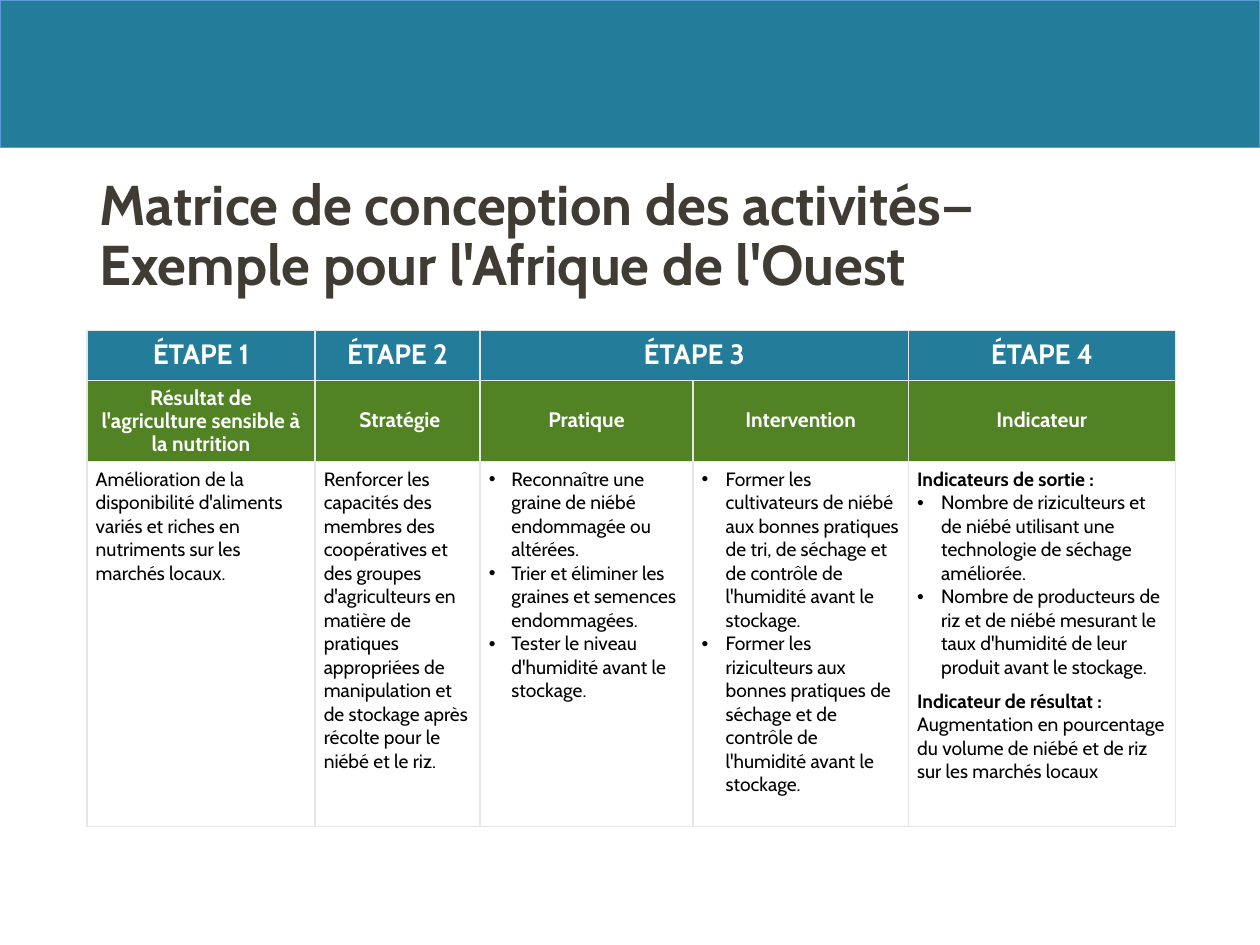
from dataclasses import dataclass

from pptx import Presentation
from pptx.dml.color import RGBColor as RGB
from pptx.enum.shapes import MSO_SHAPE as SHAPE
from pptx.enum.text import MSO_ANCHOR as ANCHOR, PP_ALIGN as ALIGN
from pptx.oxml import parse_xml
from pptx.oxml.ns import nsdecls
from pptx.util import Inches, Pt


@dataclass(frozen=True)
class Theme:
    font: str = "Cabin"
    teal: str = "237C9A"
    green: str = "518325"
    band_line: str = "5B9BD5"
    grid: str = "E7E6E6"
    title: str = "403B33"
    white: str = "FFFFFF"
    body: str = "000000"
    title_size: int = 32
    step_size: int = 16
    heading_size: int = 12
    body_size: int = 11


@dataclass(frozen=True)
class Item:
    """One paragraph of a body cell: a bold lead, then plain text."""
    text: str = ""
    lead: str = ""
    indent: float = 0
    after: int = 0


T = Theme()
COLUMNS = [1.81, 1.31, 1.69, 1.71, 2.12]
ROWS = [0.4, 0.61, 2.9]
STEPS = ["ÉTAPE 1", "ÉTAPE 2", "ÉTAPE 3", "", "ÉTAPE 4"]
HEADINGS = ["Résultat de l'agriculture sensible à la nutrition", " Stratégie",
            "Pratique", "Intervention", "Indicateur"]
BODY = [
    [Item("Amélioration de la disponibilité d'aliments variés et riches en "
          "nutriments sur les marchés locaux.")],
    [Item("Renforcer les capacités des membres des coopératives et des groupes "
          "d'agriculteurs en matière de pratiques appropriées de manipulation "
          "et de stockage après récolte pour le niébé et le riz.")],
    [Item("Reconnaître une graine de niébé endommagée ou altérées.", indent=0.18),
     Item("Trier et éliminer les graines et semences endommagées.", indent=0.18),
     Item("Tester le niveau d'humidité avant le stockage.", indent=0.18)],
    [Item("Former les cultivateurs de niébé aux bonnes pratiques de tri, de "
          "séchage et de contrôle de l'humidité avant le stockage.", indent=0.19),
     Item("Former les riziculteurs aux bonnes pratiques de séchage et de "
          "contrôle de l'humidité avant le stockage.", indent=0.19)],
    [Item(lead="Indicateurs de sortie :"),
     Item("Nombre de riziculteurs et de niébé utilisant une technologie de "
          "séchage améliorée.", indent=0.19),
     Item("Nombre de producteurs de riz et de niébé mesurant le taux d'humidité "
          "de leur produit avant le stockage.", indent=0.19, after=6),
     Item("Augmentation en pourcentage du volume de niébé et de riz sur les "
          "marchés locaux", lead="Indicateur de résultat : ")],
]


def style(font, size, color, bold=False):
    font.name, font.size, font.bold = T.font, Pt(size), bold
    font.color.rgb = RGB.from_string(color)


def add_bullet(p, indent):
    pPr = p._p.get_or_add_pPr()
    pPr.set("marL", str(Inches(indent)))
    pPr.set("indent", str(-Inches(indent)))
    pPr.append(parse_xml(f'<a:buFont {nsdecls("a")} typeface="Arial"/>'))
    pPr.append(parse_xml(f'<a:buChar {nsdecls("a")} char="•"/>'))


def add_borders(cell):
    tcPr = cell._tc.get_or_add_tcPr()
    for i, side in enumerate(("lnL", "lnR", "lnT", "lnB")):
        tcPr.insert(i, parse_xml(
            f'<a:{side} {nsdecls("a")} w="{Pt(0.75)}"><a:solidFill>'
            f'<a:srgbClr val="{T.grid}"/></a:solidFill></a:{side}>'))


def set_margins(cell, vertical):
    cell.margin_left = cell.margin_right = Inches(0.07)
    cell.margin_top = cell.margin_bottom = Inches(vertical)


def fill_header(cell, text, color, size, margin):
    set_margins(cell, margin)
    cell.vertical_anchor = ANCHOR.MIDDLE
    cell.fill.solid()
    cell.fill.fore_color.rgb = RGB.from_string(color)
    p = cell.text_frame.paragraphs[0]
    p.text = text
    p.alignment, p.line_spacing, p.space_after = ALIGN.CENTER, 0.9, Pt(10)
    for r in p.runs:
        style(r.font, size, T.white, True)


def fill_body(cell, items):
    set_margins(cell, 0.05)
    cell.fill.background()
    tf = cell.text_frame
    for i, item in enumerate(items):
        p = tf.add_paragraph() if i else tf.paragraphs[0]
        if item.indent:
            add_bullet(p, item.indent)
        p.space_after = Pt(item.after)
        for text, bold in ((item.lead, True), (item.text, False)):
            if text:
                r = p.add_run()
                r.text = text
                style(r.font, T.body_size, T.body, bold)


def add_band(s, *box):
    sp = s.shapes.add_shape(SHAPE.RECTANGLE, *map(Inches, box))
    sp.shadow.inherit = False
    sp.fill.solid()
    sp.fill.fore_color.rgb = RGB.from_string(T.teal)
    sp.line.color.rgb = RGB.from_string(T.band_line)
    sp.line.width = Pt(0.5)


def add_title(s, text, *box):
    tf = s.shapes.add_textbox(*map(Inches, box)).text_frame
    tf.word_wrap = True
    tf.vertical_anchor = ANCHOR.MIDDLE
    tf.text = text
    p = tf.paragraphs[0]
    p.line_spacing = 0.9
    style(p.runs[0].font, T.title_size, T.title, True)


def add_matrix(s, *box):
    table = s.shapes.add_table(len(ROWS), len(COLUMNS), *map(Inches, box)).table
    table.first_row = table.horz_banding = False
    for row, height in zip(table.rows, ROWS):
        row.height = Inches(height)
    for c, width in enumerate(COLUMNS):
        table.columns[c].width = Inches(width)
        fill_header(table.cell(0, c), STEPS[c], T.teal, T.step_size, 0.08)
        fill_header(table.cell(1, c), HEADINGS[c], T.green, T.heading_size, 0.05)
        fill_body(table.cell(2, c), BODY[c])
    for cell in table.iter_cells():
        add_borders(cell)
    table.cell(0, 2).merge(table.cell(0, 3))


def main():
    prs = Presentation()
    prs.slide_width, prs.slide_height = Inches(10), Inches(7.5)
    s = prs.slides.add_slide(prs.slide_layouts[6])
    add_band(s, 0, 0, 10, 1.17)
    add_title(s, "Matrice de conception des activités—Exemple pour l'Afrique "
              "de l'Ouest", 0.69, 1.37, 8.62, 1.03)
    add_matrix(s, 0.69, 2.62, sum(COLUMNS), sum(ROWS))
    prs.save("out.pptx")


if __name__ == "__main__":
    main()
